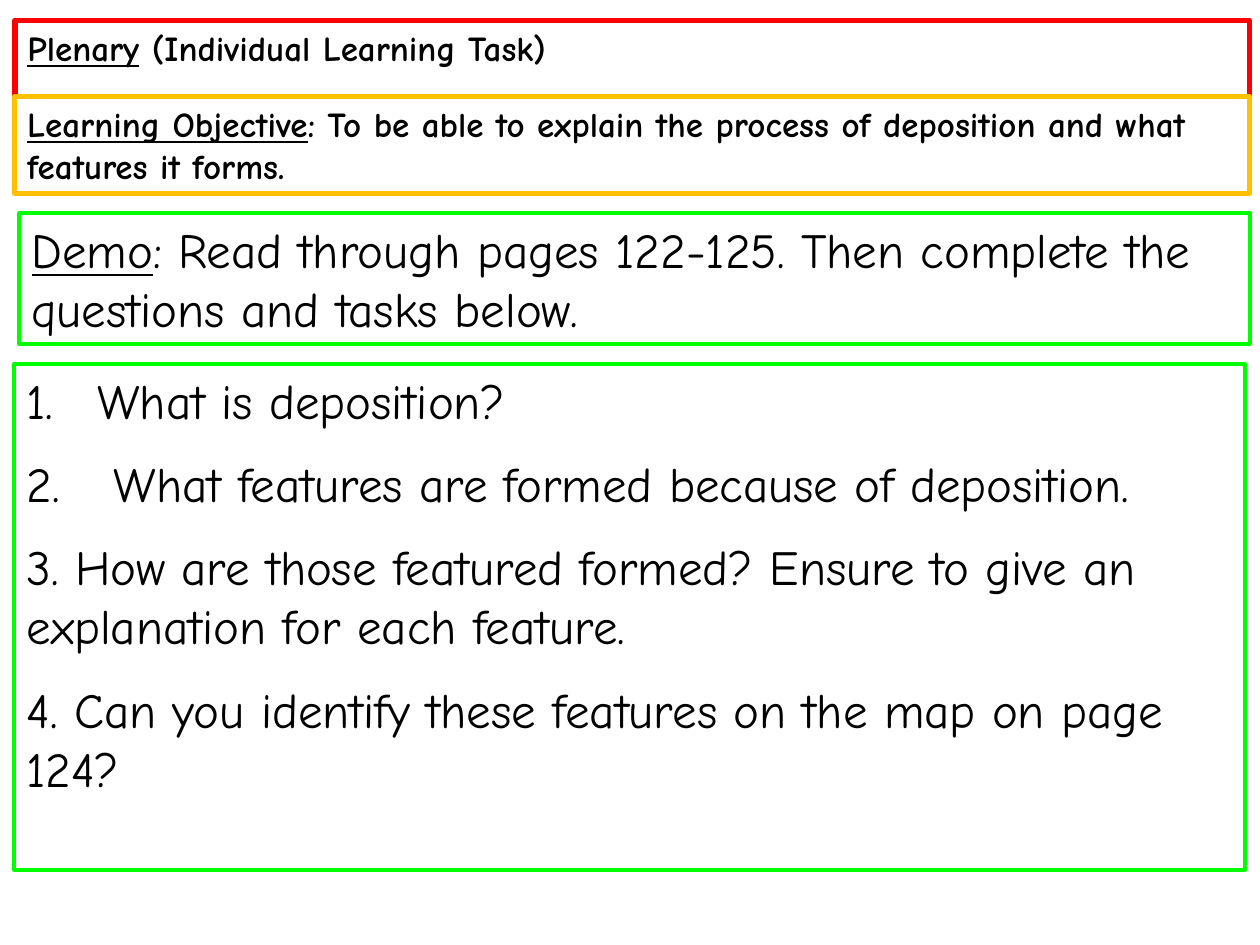
"""Build the plenary slide: a title, an objective, a demo task and four questions."""
import pptx
import pptx.dml.color
import pptx.enum.shapes
import pptx.enum.text
import pptx.oxml
import pptx.oxml.ns
import pptx.util

Pt = pptx.util.Pt
BLACK = pptx.dml.color.RGBColor(0, 0, 0)
WHITE = pptx.dml.color.RGBColor(255, 255, 255)
RED = pptx.dml.color.RGBColor(255, 0, 0)
AMBER = pptx.dml.color.RGBColor(255, 192, 0)
GREEN = pptx.dml.color.RGBColor(0, 255, 0)
FONT = "Comic Neue"


def frame_box(box, bounds, color, weight):
    box.left, box.top, box.width, box.height = [Pt(value) for value in bounds]
    box.line.color.rgb = color
    box.line.width = Pt(weight)
    frame = box.text_frame
    frame.word_wrap = True
    frame.vertical_anchor = pptx.enum.text.MSO_ANCHOR.TOP
    frame.auto_size = pptx.enum.text.MSO_AUTO_SIZE.SHAPE_TO_FIT_TEXT


def style_paragraph(para, size, bold, gap=0):
    para.alignment = pptx.enum.text.PP_ALIGN.LEFT
    para.space_before = Pt(gap)
    para.font.name = FONT
    para.font.size = Pt(size)
    para.font.bold = bold
    para.font.color.rgb = BLACK


deck = pptx.Presentation()
deck.slide_width, deck.slide_height = Pt(720), Pt(540)
page = deck.slides.add_slide(deck.slide_layouts[1])
title, questions = page.shapes.title, page.placeholders[1]
objective, demo = [
    page.shapes.add_shape(pptx.enum.shapes.MSO_SHAPE.RECTANGLE, 0, 0, Pt(700), Pt(50))
    for index in range(2)
]

headed_boxes = [
    (title, (8.5, 11.5, 705.5, 31.5), RED, 3, 20, True,
     "Plenary", " (Individual Learning Task)"),
    (objective, (8.5, 55, 705.5, 55.5), AMBER, 3, 20, True,
     "Learning Objective",
     ": To be able to explain the process of deposition and what features it forms."),
    (demo, (11, 122, 703.5, 74.5), GREEN, 2.25, 28, False,
     "Demo", ": Read through pages 122-125. Then complete the questions and tasks below."),
]
for box, bounds, color, weight, size, bold, heading, detail in headed_boxes:
    frame_box(box, bounds, color, weight)
    box.fill.solid()
    box.fill.fore_color.rgb = WHITE
    para = box.text_frame.paragraphs[0]
    style_paragraph(para, size, bold)
    for text, underlined in ((heading, True), (detail, False)):
        span = para.add_run()
        span.text = text
        span.font.underline = underlined
        span.font.color.rgb = BLACK

for box in (objective, demo):
    box.shadow.inherit = False

frame_box(questions, (8, 208, 703.5, 296), GREEN, 2.25)
question_lines = [
    ("What is deposition?", True),
    (" What features are formed because of deposition.", True),
    ("3. How are those featured formed? Ensure to give an explanation for each feature.", False),
    ("4. Can you identify these features on the map on page 124?", False),
]
for index, (text, numbered) in enumerate(question_lines):
    frame = questions.text_frame
    para = frame.add_paragraph() if index else frame.paragraphs[0]
    para.text = text
    style_paragraph(para, 28, False, 14 if index else 0)
    properties = para._p.get_or_add_pPr()
    indent = Pt(40.5) if numbered else 0
    properties.set("marL", str(indent))
    properties.set("indent", str(-indent))
    bullet = pptx.oxml.parse_xml(
        f'<a:{"buAutoNum" if numbered else "buNone"} {pptx.oxml.ns.nsdecls("a")}/>'
    )
    if numbered:
        bullet.set("type", "arabicPeriod")
    properties.find(pptx.oxml.ns.qn("a:defRPr")).addprevious(bullet)

deck.save("out.pptx")
